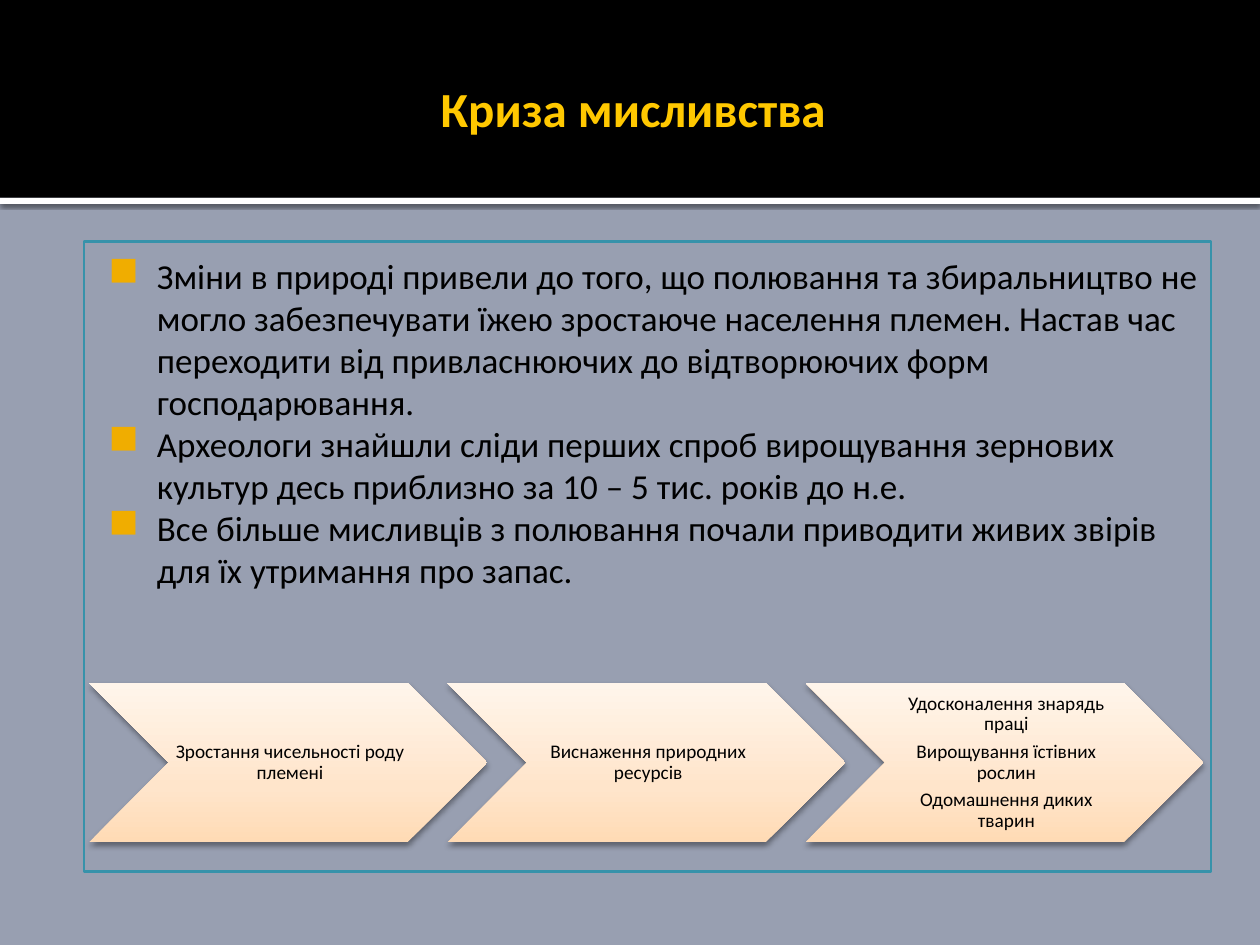
from lxml import etree
from pptx import Presentation
from pptx.dml.color import RGBColor
from pptx.enum import shapes, text
from pptx.oxml import ns
from pptx.util import Pt

TITLE = "Криза мисливства"
FACTS = [
    "Зміни в природі привели до того, що полювання та збиральництво не могло "
    "забезпечувати їжею зростаюче населення племен. Настав час переходити від "
    "привласнюючих до відтворюючих форм господарювання.",
    "Археологи знайшли сліди перших спроб вирощування зернових культур десь "
    "приблизно за 10 – 5 тис. років до н.е.",
    "Все більше мисливців з полювання почали приводити живих звірів для їх "
    "утримання про запас.",
]
STEPS = [
    ["Зростання чисельності роду племені"],
    ["Виснаження природних ресурсів"],
    ["Удосконалення знарядь праці", "Вирощування їстівних рослин",
     "Одомашнення диких тварин"],
]
STOPS = [(0, "FFDBB5"), (35, "FFE5CB"), (100, "FFF5EB")]
FONT = "Calibri"
WIDE, HIGH = 720, 540
BAND = 113
LEFT, TOP, STEP_W, STEP_H = 51, 390.3, 227.4, 91
PITCH = 0.9 * STEP_W


def color(code):
    return RGBColor.from_string(code)


def node(parent, tag, **attrs):
    return etree.SubElement(parent, ns.qn("a:" + tag), attrs)


def add_box(slide, kind, area, fill=None, line=None):
    box = slide.shapes.add_shape(kind, *map(Pt, area))
    box.shadow.inherit = False
    if fill:
        box.fill.solid()
        box.fill.fore_color.rgb = color(fill)
    else:
        box.fill.background()
    if line:
        box.line.color.rgb = color(line)
        box.line.width = Pt(1.5)
    else:
        box.line.fill.background()
    return box


def add_shade(box, alpha, blur, dist):
    effect = box.element.spPr.find(ns.qn("a:effectLst"))
    shade = node(effect, "outerShdw", blurRad=str(Pt(blur)), dist=str(Pt(dist)),
                 dir="5400000", algn="tl", rotWithShape="0")
    tint = node(shade, "srgbClr", val="000000")
    node(tint, "alpha", val=str(alpha * 1000))


def add_blend(box):
    box.fill.gradient()
    box.fill.gradient_angle = 90
    stops = box.element.spPr.find(".//" + ns.qn("a:gsLst"))
    for old in list(stops):
        stops.remove(old)
    for pos, code in STOPS:
        node(node(stops, "gs", pos=str(pos * 1000)), "srgbClr", val=code)


def set_frame(frame, insets, anchor):
    frame.word_wrap = True
    frame.vertical_anchor = anchor
    (frame.margin_left, frame.margin_top,
     frame.margin_right, frame.margin_bottom) = map(Pt, insets)


def write(frame, lines, size, align, code="000000", bold=False):
    for i, line in enumerate(lines):
        para = frame.add_paragraph() if i else frame.paragraphs[0]
        para.alignment = align
        run = para.add_run()
        run.text = line
        run.font.name = FONT
        run.font.size = Pt(size)
        run.font.bold = bold
        run.font.color.rgb = color(code)


def add_bullet(para):
    props = para._p.get_or_add_pPr()
    props.set("marL", str(Pt(34.6)))
    props.set("indent", str(Pt(-25.2)))
    node(node(props, "buClr"), "srgbClr", val="F0AD00")
    node(props, "buSzPct", val="80000")
    node(props, "buFont", typeface="Wingdings 2")
    node(props, "buChar", char="➢")


def add_step(slide, left, lines):
    arrow = add_box(slide, shapes.MSO_SHAPE.CHEVRON, (left, TOP, STEP_W, STEP_H))
    add_blend(arrow)
    add_shade(arrow, 38, 3.5, 2)
    label = slide.shapes.add_textbox(
        *map(Pt, (left + STEP_H / 2, TOP, STEP_W - STEP_H, STEP_H)))
    frame = label.text_frame
    set_frame(frame, (3.6, 1.4, 1.4, 1.4), text.MSO_ANCHOR.MIDDLE)
    write(frame, lines, 11, text.PP_ALIGN.CENTER)
    for para in frame.paragraphs:
        para.line_spacing = 0.9
        para.space_after = Pt(3.85)


def main():
    deck = Presentation()
    deck.slide_width, deck.slide_height = Pt(WIDE), Pt(HIGH)
    slide = deck.slides.add_slide(deck.slide_layouts[5])
    slide.background.fill.solid()
    slide.background.fill.fore_color.rgb = color("989FB1")

    rect = shapes.MSO_SHAPE.RECTANGLE
    rule = add_box(slide, rect, (0, BAND, WIDE, 3.6), "FFFFFF")
    add_shade(rule, 60, 2.5, 0.8)
    add_box(slide, rect, (0, 0, WIDE, BAND), "000000")

    body = add_box(slide, rect, (48, 138, 644, 360), line="3792AA")
    set_frame(body.text_frame, (7.2, 7.2, 7.2, 3.6), text.MSO_ANCHOR.TOP)
    write(body.text_frame, FACTS, 20, text.PP_ALIGN.LEFT)
    for para in body.text_frame.paragraphs:
        add_bullet(para)

    for i, lines in enumerate(STEPS):
        add_step(slide, LEFT + i * PITCH, lines)

    title = slide.shapes.title
    title.left, title.top, title.width, title.height = map(Pt, (36, 12.2, 648, 98.6))
    set_frame(title.text_frame, (7.2, 3.6, 3.6, 3.6), text.MSO_ANCHOR.MIDDLE)
    write(title.text_frame, [TITLE], 28, text.PP_ALIGN.CENTER, "FFC800", True)
    slide.shapes._spTree.append(title.element)

    deck.save("out.pptx")


if __name__ == "__main__":
    main()
